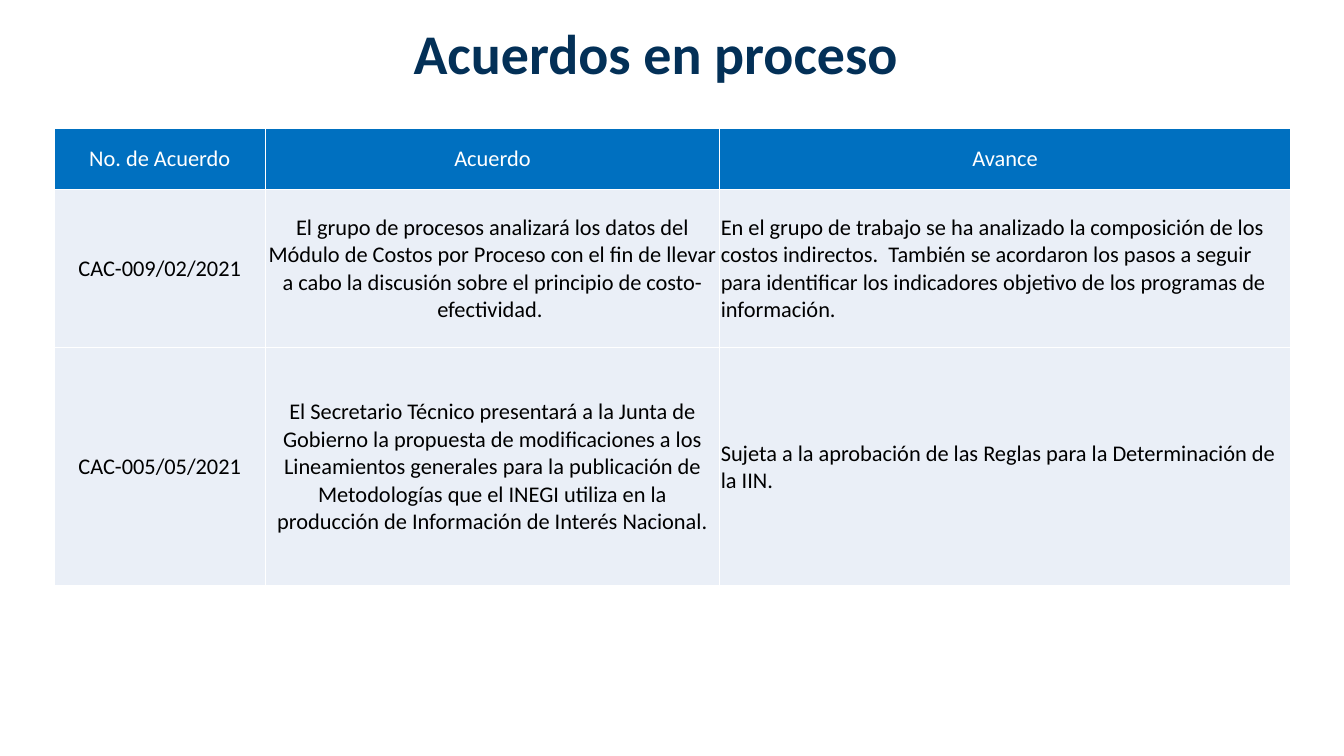
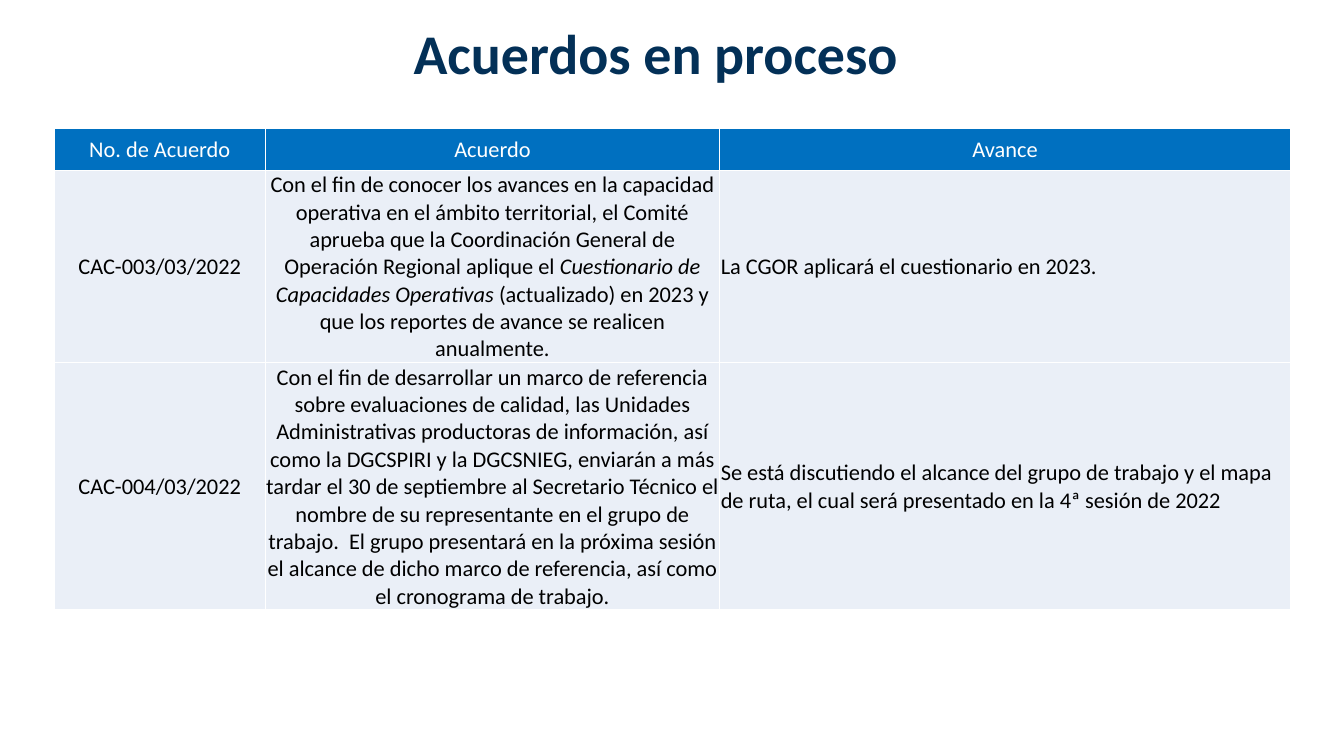
"""Build the slides that report the agreements in progress."""
from lxml import etree
from pptx import Presentation, util as u
from pptx.dml.color import RGBColor
from pptx.enum import text as t
from pptx.oxml import ns

NAVY = RGBColor(0x03, 0x30, 0x57)
BLUE = RGBColor(0x00, 0x70, 0xC0)
PALE = RGBColor(0xEA, 0xEF, 0xF7)
WHITE = RGBColor(0xFF, 0xFF, 0xFF)
BLACK = RGBColor(0x00, 0x00, 0x00)

TITLE = "Acuerdos en proceso "
HEADINGS = ("No. de Acuerdo", "Acuerdo", "Avance")
COLUMN_SHARES = (15.68, 33.83, 42.46)
CENTER, LEFT = t.PP_ALIGN.CENTER, t.PP_ALIGN.LEFT

SLIDES = [
    ((8.13, 20.93, 31.47), [
        ("CAC-009/02/2021",
         "El grupo de procesos analizará los datos del Módulo de Costos por Proceso con el fin "
         "de llevar a cabo la discusión sobre el principio de costo-efectividad. ",
         "En el grupo de trabajo se ha analizado la composición de los costos indirectos.  "
         "También se acordaron los pasos a seguir para identificar los indicadores objetivo "
         "de los programas de información."),
        ("CAC-005/05/2021",
         "El Secretario Técnico presentará a la Junta de Gobierno la propuesta de "
         "modificaciones a los Lineamientos generales para la publicación de Metodologías que "
         "el INEGI utiliza en la producción de Información de Interés Nacional.",
         "Sujeta a la aprobación de las Reglas para la Determinación de la IIN."),
    ]),
    ((5.6, 25.47, 32.67), [
        ("CAC-003/03/2022",
         "Con el fin de conocer los avances en la capacidad operativa en el ámbito "
         "territorial, el Comité aprueba que la Coordinación General de Operación Regional "
         "aplique el *Cuestionario de Capacidades Operativas *(actualizado) en 2023 y que los "
         "reportes de avance se realicen anualmente.",
         "La CGOR aplicará el cuestionario en 2023."),
        ("CAC-004/03/2022",
         "Con el fin de desarrollar un marco de referencia sobre evaluaciones de calidad, las "
         "Unidades Administrativas productoras de información, así como la DGCSPIRI y la "
         "DGCSNIEG, enviarán a más tardar el 30 de septiembre al Secretario Técnico el nombre "
         "de su representante en el grupo de trabajo.  El grupo presentará en la próxima "
         "sesión el alcance de dicho marco de referencia, así como el cronograma de trabajo.",
         "Se está discutiendo el alcance del grupo de trabajo y el mapa de ruta, el cual será "
         "presentado en la 4ª sesión de 2022"),
    ]),
]


def write(frame, text, size=16, color=BLACK, bold=False, align=CENTER, spacing=None):
    """Fill a text frame, setting the parts between asterisks in italics."""
    frame.word_wrap = True
    paragraph = frame.paragraphs[0]
    paragraph.alignment = align
    paragraph.line_spacing = spacing
    for index, part in enumerate(text.split("*")):
        run = paragraph.add_run()
        run.text = part
        run.font.name = "Calibri"
        run.font.size = u.Pt(size)
        run.font.bold = bold
        run.font.italic = index % 2 == 1
        run.font.color.rgb = color


class Deck:
    """Hold the style and the current slide, with lengths in percent of its size."""

    def __init__(self):
        """Start an empty wide presentation."""
        self.presentation = Presentation()
        self.presentation.slide_width = u.Inches(13.33)
        self.presentation.slide_height = u.Inches(7.5)
        self.slide = None

    def across(self, share):
        """Turn a share of the slide's width into a length."""
        return round(self.presentation.slide_width * share / 100)

    def down(self, share):
        """Turn a share of the slide's height into a length."""
        return round(self.presentation.slide_height * share / 100)

    def add_slide(self):
        """Add a blank slide and make it current."""
        self.slide = self.presentation.slides.add_slide(self.presentation.slide_layouts[6])

    def title(self, text):
        """Add the slide title."""
        shape = self.slide.shapes.add_textbox(
            self.across(-0.75), self.down(2.8), self.across(100), self.down(8.4))
        write(shape.text_frame, text, size=40, color=NAVY, bold=True, spacing=0.9)

    def table(self, rows, column_shares, row_shares):
        """Add a table whose first row is the heading and last column is left aligned."""
        table = self.slide.shapes.add_table(
            len(rows), len(column_shares), self.across(4.05), self.down(16.93),
            self.across(sum(column_shares)), self.down(sum(row_shares))).table
        table.first_row = table.horz_banding = False
        for column, share in zip(table.columns, column_shares):
            column.width = self.across(share)
        for row, share, texts in zip(table.rows, row_shares, rows):
            row.height = self.down(share)
            heading = texts is rows[0]
            for index, (cell, text) in enumerate(zip(row.cells, texts)):
                last = index == len(texts) - 1
                self.cell(cell, text, BLUE if heading else PALE,
                          color=WHITE if heading else BLACK,
                          align=LEFT if last and not heading else CENTER)

    def cell(self, cell, text, fill, **text_format):
        """Style one table cell with white borders and write its text."""
        cell.margin_left = cell.margin_right = cell.margin_top = u.Inches(0.01)
        cell.margin_bottom = 0
        cell.vertical_anchor = t.MSO_ANCHOR.MIDDLE
        properties = cell._tc.get_or_add_tcPr()
        for side in ("a:lnL", "a:lnR", "a:lnT", "a:lnB"):
            line = etree.SubElement(properties, ns.qn(side), w=str(u.Pt(1)))
            solid = etree.SubElement(line, ns.qn("a:solidFill"))
            etree.SubElement(solid, ns.qn("a:srgbClr"), val=str(WHITE))
        cell.fill.solid()
        cell.fill.fore_color.rgb = fill
        write(cell.text_frame, text, **text_format)


def main():
    """Build and save the presentation."""
    deck = Deck()
    for row_shares, agreements in SLIDES:
        deck.add_slide()
        deck.title(TITLE)
        deck.table([HEADINGS, *agreements], COLUMN_SHARES, row_shares)
    deck.presentation.save("out.pptx")


if __name__ == "__main__":
    main()
